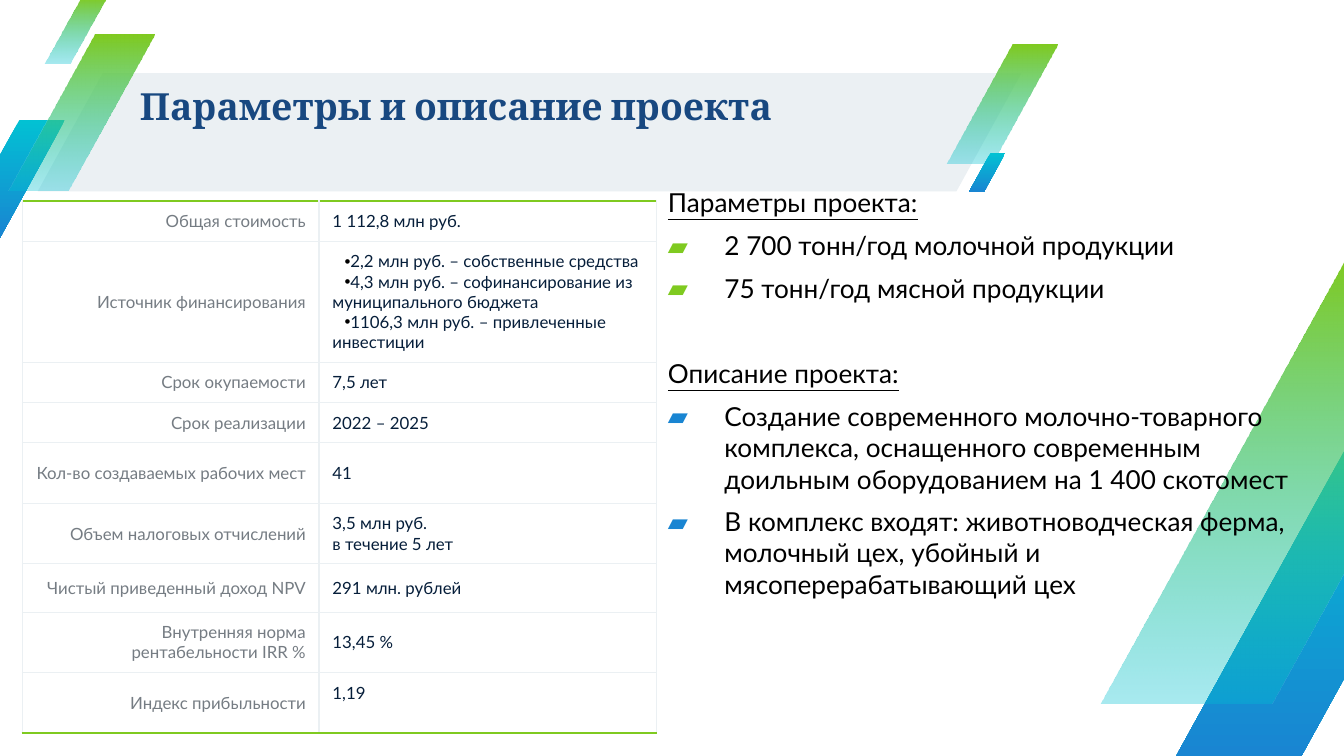
from collections import namedtuple

from lxml.etree import SubElement
from pptx import Presentation
from pptx.dml.color import RGBColor
from pptx.enum.shapes import MSO_SHAPE
from pptx.enum.text import MSO_ANCHOR, MSO_AUTO_SIZE, PP_ALIGN
from pptx.oxml.ns import qn
from pptx.util import Inches, Pt

GREEN = RGBColor(0x7F, 0xCA, 0x20)
TEAL = RGBColor(0x02, 0xC1, 0xD3)
BLUE = RGBColor(0x19, 0x85, 0xD2)
MIST = RGBColor(0xEB, 0xF0, 0xF3)
NAVY = RGBColor(0x18, 0x48, 0x80)
INK = RGBColor(0x06, 0x1E, 0x3A)
GRAY = RGBColor(0x75, 0x7C, 0x83)
BLACK = RGBColor(0, 0, 0)

COLUMN = ROW = Inches(0.1)
COLUMNS, ROWS = 100, 56.25
STRIPE_RATIO = 1.07
Box = namedtuple("Box", "left top width height")

FACTS = [
    ("Общая стоимость", ["1 112,8 млн руб."], 3),
    ("Источник финансирования", [
        "2,2 млн руб. – собственные средства",
        "4,3 млн руб. – софинансирование из муниципального бюджета",
        "1106,3 млн руб. – привлеченные инвестиции"], 9),
    ("Срок окупаемости", ["7,5 лет"], 3),
    ("Срок реализации", ["2022 – 2025"], 3),
    ("Кол-во создаваемых рабочих мест", ["41"], 4.5),
    ("Объем налоговых отчислений", ["3,5 млн руб.", "в течение 5 лет"], 4.5),
    ("Чистый приведенный доход NPV", ["291 млн. рублей"], 3.6),
    ("Внутренняя норма рентабельности IRR %", ["13,45 %"], 4.5),
    ("Индекс прибыльности", ["1,19"], 4.5),
]
SECTIONS = [
    ("Параметры проекта:", GREEN, [
        "2 700 тонн/год молочной продукции",
        "75 тонн/год мясной продукции"]),
    ("Описание проекта:", BLUE, [
        "Создание современного молочно-товарного комплекса, оснащенного "
        "современным доильным оборудованием на 1 400 скотомест",
        "В комплекс входят: животноводческая ферма, молочный цех, "
        "убойный и мясоперерабатывающий цех"]),
]


def emu(box):
    return (round(box.left * COLUMN), round(box.top * ROW),
            round(box.width * COLUMN), round(box.height * ROW))


def add_run(paragraph, text, font, size, color, bold=False, underline=False):
    run = paragraph.add_run()
    run.text = text
    run.font.name = font
    run.font.size = Pt(size)
    run.font.bold = bold
    run.font.underline = underline
    run.font.color.rgb = color


def set_bullet(paragraph, left, indent, char=None, color=BLACK, font="Lato"):
    properties = paragraph._p.get_or_add_pPr()
    properties.set("marL", str(Inches(left)))
    properties.set("indent", str(Inches(indent)))
    if char is None:
        SubElement(properties, qn("a:buNone"))
        return
    bullet_color = SubElement(properties, qn("a:buClr"))
    SubElement(bullet_color, qn("a:srgbClr"), val=str(color))
    SubElement(properties, qn("a:buFont"), typeface=font)
    SubElement(properties, qn("a:buChar"), char=char)


def add_slanted(slide, box, slant):
    slanted = slide.shapes.add_shape(MSO_SHAPE.PARALLELOGRAM, *emu(box))
    slanted.adjustments[0] = slant
    slanted.shadow.inherit = False
    slanted.line.fill.background()
    return slanted


def add_stripe(slide, left, top, width, start, end, end_alpha):
    box = Box(left, top, width, width * STRIPE_RATIO)
    stripe = add_slanted(slide, box, 0.59)
    stripe.fill.gradient()
    stripe.fill.gradient_angle = 270
    for stop, color, position in zip(stripe.fill.gradient_stops, (start, end), (0, 1)):
        stop.color.rgb = color
        stop.position = position
    last_color = stripe._element.findall(".//" + qn("a:srgbClr"))[-1]
    SubElement(last_color, qn("a:alpha"), val=str(end_alpha * 1000))


def add_stripes(slide, box, stripes):
    for left, top, width, is_green in stripes:
        colors = (GREEN, TEAL, 34) if is_green else (TEAL, BLUE, 100)
        add_stripe(slide, box.left + left, box.top + top, width, *colors)


def add_header(slide, box):
    band = add_slanted(slide, Box(box.left + 2.8, box.top + 5.45, 73.2, 8.8), 0.55)
    band.fill.solid()
    band.fill.fore_color.rgb = MIST
    add_stripes(slide, box, [
        (-3.4, 8.9, 8.25, False), (70.45, 3.35, 8.25, True), (0.6, 2.55, 10.9, True),
        (3.3, -0.2, 4.6, True), (72.1, 11.4, 2.7, False)])

    title = slide.shapes.title
    title.left, title.top, title.width, title.height = emu(
        Box(box.left + 10.4, box.top + 3.65, 65.9, 8.9))
    prepare_frame(title, MSO_ANCHOR.MIDDLE)
    heading = title.text_frame.paragraphs[0]
    heading.alignment = PP_ALIGN.LEFT
    heading.line_spacing = 0.9
    add_run(heading, "Параметры и описание проекта", "Cambria", 20, NAVY, bold=True)
    slide.shapes._spTree.append(title._element)


def add_corner(slide, box):
    add_stripes(slide, box, [(5.6, 12.8, 22.7, False), (0, 0, 31, True)])


def prepare_frame(holder, anchor):
    frame = holder.text_frame
    frame.word_wrap = True
    frame.auto_size = MSO_AUTO_SIZE.NONE
    frame.vertical_anchor = anchor
    frame.margin_left = frame.margin_right = 0
    frame.margin_top = frame.margin_bottom = 0


def set_borders(cell, is_first, is_last):
    properties = cell._tc.get_or_add_tcPr()
    for side, accented in (("L", False), ("R", False), ("T", is_first), ("B", is_last)):
        width = Pt(1.5 if accented else 0.75)
        border = SubElement(properties, qn("a:ln" + side), w=str(width))
        fill = SubElement(border, qn("a:solidFill"))
        SubElement(fill, qn("a:srgbClr"), val=str(GREEN if accented else MIST))


def fill_cell(cell, lines, color, alignment):
    cell.fill.background()
    cell.vertical_anchor = MSO_ANCHOR.MIDDLE
    cell.margin_left = cell.margin_right = Inches(0.1)
    cell.margin_top = cell.margin_bottom = Inches(0.07)
    for index, line in enumerate(lines):
        frame = cell.text_frame
        paragraph = frame.add_paragraph() if index else frame.paragraphs[0]
        paragraph.alignment = alignment
        if len(lines) > 2:
            set_bullet(paragraph, 0, 0.09, "•", font="Arial")
        add_run(paragraph, line, "Lato", 9, color)


def add_facts(slide, box):
    facts = slide.shapes.add_table(len(FACTS), 2, *emu(box)).table
    facts.first_row = facts.horz_banding = False
    for column, share in zip(facts.columns, (0.468, 0.532)):
        column.width = round(box.width * share * COLUMN)
    unit = box.height / sum(height for _, _, height in FACTS)
    for index, (label, values, height) in enumerate(FACTS):
        facts.rows[index].height = round(height * unit * ROW)
        label_cell, value_cell = facts.cell(index, 0), facts.cell(index, 1)
        for cell in (label_cell, value_cell):
            set_borders(cell, index == 0, index == len(FACTS) - 1)
        fill_cell(label_cell, [label], GRAY, PP_ALIGN.RIGHT)
        fill_cell(value_cell, values, INK, PP_ALIGN.LEFT)
    value_cell.margin_bottom = Inches(0.22)


def add_description(slide, box):
    body = slide.placeholders[1]
    body.left, body.top, body.width, body.height = emu(box)
    prepare_frame(body, MSO_ANCHOR.TOP)
    paragraph = body.text_frame.paragraphs[0]
    for number, (heading, color, items) in enumerate(SECTIONS):
        if number:
            paragraph = body.text_frame.add_paragraph()
        paragraph.space_before = Pt(29 if number else 6)
        set_bullet(paragraph, 0.08, 0)
        add_run(paragraph, heading, "Lato", 14, BLACK, underline=True)
        for item in items:
            paragraph = body.text_frame.add_paragraph()
            paragraph.space_before = Pt(6)
            set_bullet(paragraph, 0.5, -0.42, "▰", color)
            add_run(paragraph, item, "Lato", 14, BLACK)
    slide.shapes._spTree.append(body._element)


def main():
    deck = Presentation()
    deck.slide_width, deck.slide_height = round(COLUMNS * COLUMN), round(ROWS * ROW)
    slide = deck.slides.add_slide(deck.slide_layouts[1])
    add_corner(slide, Box(81.9, 19.2, 31, 37))
    add_header(slide, Box(0, 0, COLUMNS, 14.3))
    add_facts(slide, Box(1.65, 14.95, 47.2, 39.6))
    add_description(slide, Box(48.9, 13.9, 47.8, 34.4))
    deck.save("out.pptx")


if __name__ == "__main__":
    main()
